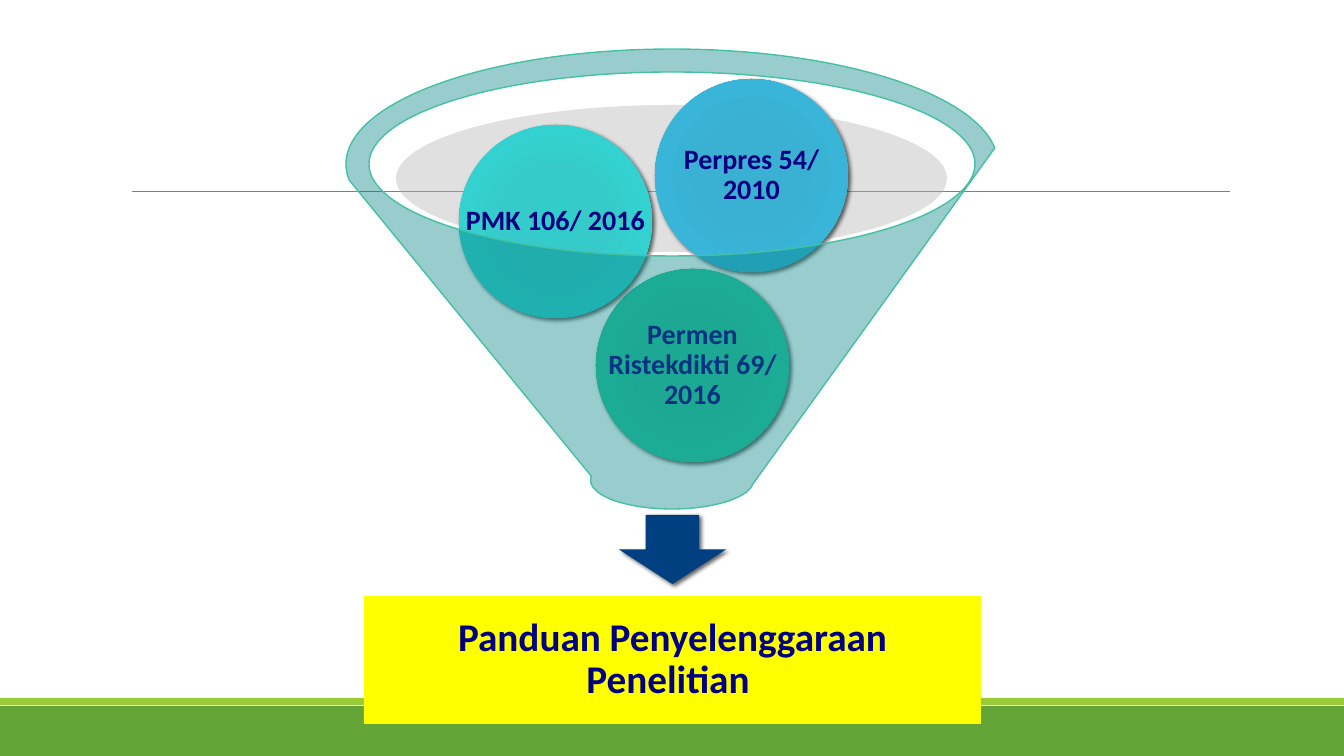
from lxml.etree import SubElement
from pptx import Presentation
from pptx.dml.color import RGBColor
from pptx.enum.shapes import MSO_CONNECTOR, MSO_SHAPE
from pptx.enum.text import MSO_ANCHOR, PP_ALIGN
from pptx.oxml import parse_xml
from pptx.oxml.ns import nsdecls, qn
from pptx.util import Pt

PX = 12192000 / 1344


def add_shape(kind, box, fill, alpha=None, line=None, shadow=False):
    shape = slide.shapes.add_shape(kind, *[round(n * PX) for n in box])
    shape.shadow.inherit = False
    shape.fill.solid()
    shape.fill.fore_color.rgb = RGBColor.from_string(fill)
    properties = shape._element.spPr
    if alpha:
        color = properties.find(f"{qn('a:solidFill')}/{qn('a:srgbClr')}")
        SubElement(color, qn("a:alpha"), val=str(alpha * 1000))
    if line:
        shape.line.color.rgb = RGBColor.from_string(line)
        shape.line.width = Pt(1)
    else:
        shape.line.fill.background()
    if shadow:
        properties.find(qn("a:effectLst")).append(parse_xml(
            f'<a:outerShdw {nsdecls("a")} blurRad="38100" dist="25400" dir="2700000" '
            'rotWithShape="0"><a:srgbClr val="000000"><a:alpha val="60000"/>'
            '</a:srgbClr></a:outerShdw>'))
    return shape


def add_text(text, box, size=20, inset=3, color="000080"):
    frame = slide.shapes.add_textbox(*[round(n * PX) for n in box]).text_frame
    frame.word_wrap = True
    frame.vertical_anchor = MSO_ANCHOR.MIDDLE
    frame.margin_left = frame.margin_right = round(inset * PX)
    frame.margin_top = frame.margin_bottom = round(inset * PX)
    paragraph = frame.paragraphs[0]
    paragraph.alignment = PP_ALIGN.CENTER
    paragraph.line_spacing = 0.9
    run = paragraph.add_run()
    run.text = text
    run.font.name = "Calibri"
    run.font.size = Pt(size)
    run.font.bold = True
    run.font.color.rgb = RGBColor.from_string(color)


presentation = Presentation()
presentation.slide_width = round(1344 * PX)
presentation.slide_height = round(756 * PX)
slide = presentation.slides.add_slide(presentation.slide_layouts[6])

add_shape(MSO_SHAPE.RECTANGLE, (0, 706, 1344, 50), "63A537")
add_shape(MSO_SHAPE.RECTANGLE, (0, 698, 1344, 7), "99CB38")

rule = slide.shapes.add_connector(
    MSO_CONNECTOR.STRAIGHT, *[round(n * PX) for n in (132, 191, 1230, 191)])
rule.line.color.rgb = RGBColor.from_string("808080")
rule.line.width = Pt(0.5)
SubElement(rule._element.spPr, qn("a:effectLst"))

add_shape(MSO_SHAPE.OVAL, (396, 105, 551, 147), "B3B3B3", alpha=40)
add_shape(MSO_SHAPE.DOWN_ARROW, (619, 515, 107, 69), "004080", shadow=True)

result_box = (364, 596, 617, 128)
add_shape(MSO_SHAPE.RECTANGLE, result_box, "FFFF00")
add_text("Panduan Penyelenggaraan Penelitian ", result_box, size=28, inset=22)

regulations = [
    ("Permen Ristekdikti 69/ 2016", 596, 269, ("2EC5A1", "31C4A1", "2FCAA5", "3EC7A6")),
    ("PMK 106/ 2016", 459, 125, ("32CCCB", "36CBCA", "33D2D0", "42CFCD")),
    ("Perpres 54/ 2010", 655, 79, ("37B1D3", "3AB1D2", "38B5D8", "48B7D5")),
]
for name, left, top, colors in regulations:
    ball_box = (left, top, 193, 193)
    ball = add_shape(MSO_SHAPE.OVAL, ball_box, colors[0], shadow=True)
    stops = "".join(
        f'<a:gs pos="{position * 1000}"><a:srgbClr val="{color}"/></a:gs>'
        for position, color in zip((0, 34, 70, 100), colors))
    gradient = parse_xml(
        f'<a:gradFill {nsdecls("a")} rotWithShape="1"><a:gsLst>{stops}</a:gsLst>'
        '<a:path path="circle"><a:fillToRect l="100000" t="100000" r="100000" b="100000"/>'
        '</a:path></a:gradFill>')
    properties = ball._element.spPr
    properties.replace(properties.find(qn("a:solidFill")), gradient)
    add_text(name, ball_box)

add_shape(MSO_SHAPE.FUNNEL, (346, 49, 652, 460), "008080", alpha=40, line="44C1A3")

presentation.save("out.pptx")
